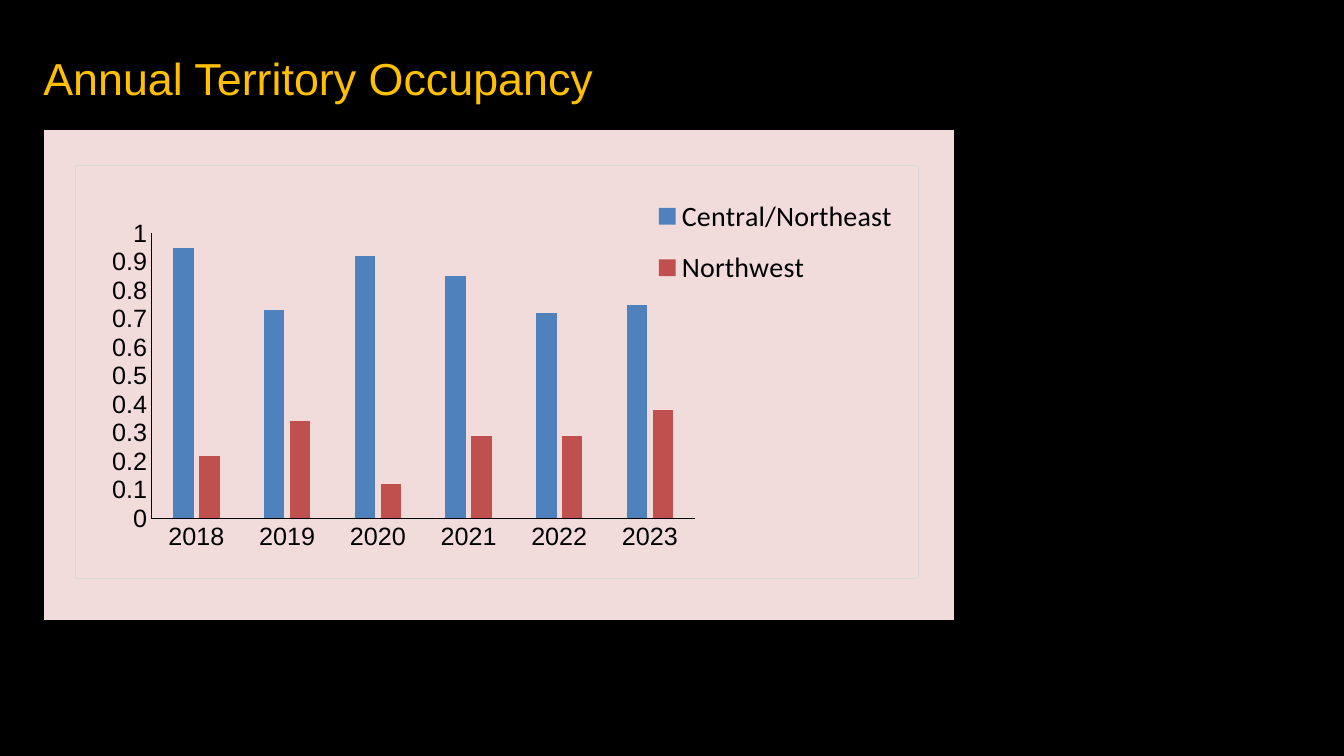
from lxml import etree
from pptx import Presentation
from pptx.chart.data import CategoryChartData
from pptx.dml.color import RGBColor
from pptx.enum.chart import XL_CHART_TYPE as ChartType
from pptx.enum.chart import XL_LEGEND_POSITION as LegendPosition
from pptx.enum.chart import XL_TICK_MARK as TickMark
from pptx.enum.shapes import MSO_SHAPE as ShapeKind
from pptx.enum.text import MSO_ANCHOR as Anchor
from pptx.enum.text import PP_ALIGN as Align
from pptx.oxml import parse_xml
from pptx.oxml.ns import nsdecls, qn
from pptx.util import Inches, Pt

YEARS = ["2018", "2019", "2020", "2021", "2022", "2023"]
OCCUPANCY = {
    "Central/Northeast": ("4F81BD", [0.95, 0.73, 0.92, 0.85, 0.72, 0.75]),
    "Northwest": ("C0504D", [0.22, 0.34, 0.12, 0.29, 0.29, 0.38]),
}


def color(hex_string):
    return RGBColor.from_string(hex_string)


def set_font(font, name, size, hex_string):
    font.name = name
    font.size = Pt(size)
    font.color.rgb = color(hex_string)


def set_line(line, hex_string):
    line.color.rgb = color(hex_string)
    line.width = Pt(0.75)


def set_layout(element, position, box, target=None):
    """Place a chart part at box, given as shares of the chart's size."""
    for old in element.findall(qn("c:layout")):
        element.remove(old)
    layout = parse_xml(f"<c:layout {nsdecls('c')}><c:manualLayout/></c:layout>")
    entries = [("layoutTarget", target)] if target else []
    entries += [("xMode", "edge"), ("yMode", "edge"), *zip("xywh", box)]
    for tag, value in entries:
        etree.SubElement(layout[0], qn(f"c:{tag}")).set("val", str(value))
    element.insert(position, layout)


def add_title(slide, box):
    title = slide.shapes.title
    title.left, title.top, title.width, title.height = map(Inches, box)
    frame = title.text_frame
    frame.text = "Annual Territory Occupancy"
    frame.vertical_anchor = Anchor.MIDDLE
    frame.word_wrap = True
    paragraph = frame.paragraphs[0]
    paragraph.alignment = Align.LEFT
    set_font(paragraph.font, "Arial", 32, "FFC000")


def format_axis(axis):
    axis.has_major_gridlines = False
    axis.major_tick_mark = axis.minor_tick_mark = TickMark.NONE
    set_font(axis.tick_labels.font, "Arial", 18, "000000")
    set_line(axis.format.line, "000000")


def add_occupancy_chart(slide, box):
    data = CategoryChartData()
    data.categories = YEARS
    for name, (_, values) in OCCUPANCY.items():
        data.add_series(name, values)
    chart = slide.shapes.add_chart(
        ChartType.COLUMN_CLUSTERED, *map(Inches, box), data).chart
    chart.has_title = False
    set_font(chart.font, "Calibri", 10, "000000")

    plot = chart.plots[0]
    plot.gap_width, plot.overlap = 219, -27
    plot.vary_by_categories = False
    for series in plot.series:
        series.format.fill.solid()
        series.format.fill.fore_color.rgb = color(OCCUPANCY[series.name][0])

    format_axis(chart.category_axis)
    format_axis(chart.value_axis)
    chart.value_axis.minimum_scale, chart.value_axis.maximum_scale = 0, 1
    chart.value_axis.major_unit = 0.1

    chart.has_legend = True
    legend = chart.legend
    legend.position = LegendPosition.BOTTOM
    legend.include_in_layout = True
    set_font(legend.font, "Calibri", 20, "000000")

    chart_element = chart._chartSpace.find(qn("c:chart"))
    set_layout(chart_element.find(qn("c:plotArea")), 0,
               (0.09, 0.164, 0.645, 0.691), "inner")
    set_layout(chart_element.find(qn("c:legend")), 1, (0.68, 0.04, 0.3, 0.29))
    chart_element.addnext(parse_xml(
        f'<c:spPr {nsdecls("c", "a")}><a:noFill/><a:ln w="{Pt(0.75)}"><a:solidFill>'
        '<a:srgbClr val="D9D9D9"/></a:solidFill></a:ln></c:spPr>'))


def add_chart_panel(slide, box):
    left, top, width, height = box
    panel = slide.shapes.add_shape(ShapeKind.RECTANGLE, *map(Inches, box))
    panel.shadow.inherit = False
    panel.fill.solid()
    panel.fill.fore_color.rgb = color("F2DCDB")
    set_line(panel.line, "000000")
    add_occupancy_chart(
        slide, (left + 0.31, top + 0.36, width - 0.66, height - 0.78))


def main():
    presentation = Presentation()
    presentation.slide_width = Inches(13.33)
    presentation.slide_height = Inches(7.5)
    slide = presentation.slides.add_slide(presentation.slide_layouts[5])
    slide.background.fill.solid()
    slide.background.fill.fore_color.rgb = color("000000")
    add_title(slide, (0.33, 0.25, 5.86, 1.03))
    add_chart_panel(slide, (0.43, 1.28, 9.04, 4.88))
    presentation.save("out.pptx")


if __name__ == "__main__":
    main()
